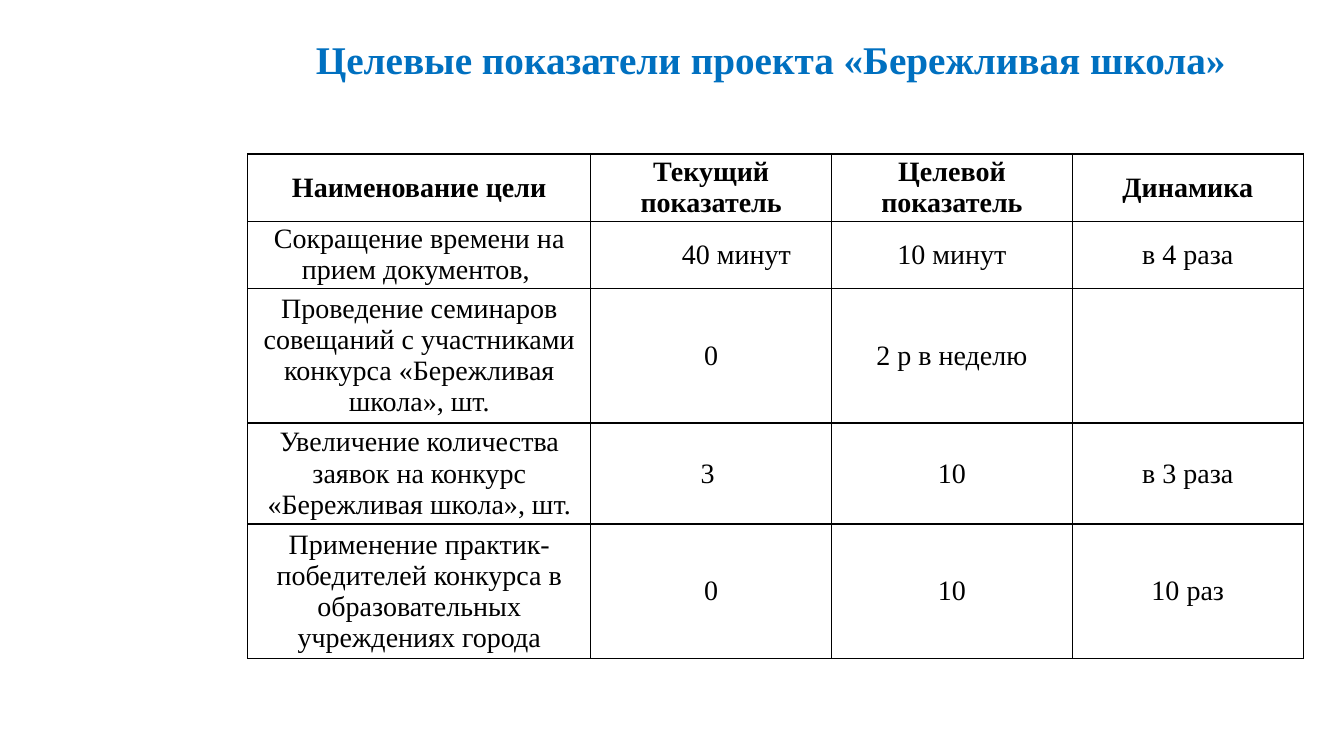
from lxml import etree
from pptx import Presentation
from pptx.dml.color import RGBColor
from pptx.enum.text import MSO_ANCHOR, PP_ALIGN
from pptx.oxml.ns import qn
from pptx.util import Pt

CENTER = PP_ALIGN.CENTER
MIDDLE = MSO_ANCHOR.MIDDLE
BLUE = RGBColor(0x00, 0x70, 0xC0)
BLACK = RGBColor(0x00, 0x00, 0x00)
WHITE = RGBColor(0xFF, 0xFF, 0xFF)
FONT = "Times New Roman"

COLUMN_WIDTHS = [245, 172, 172, 165]
ROW_HEIGHTS = [48, 48, 96, 72, 96]
INDENTS = {"40 минут": 36}
GOALS = [
    ["Наименование цели", "Текущий показатель", "Целевой показатель", "Динамика"],
    ["Сокращение времени на прием документов, ", "40 минут", "10 минут", "в 4 раза"],
    ["Проведение семинаров совещаний с участниками конкурса «Бережливая школа», шт.",
     "0", "2 р в неделю", ""],
    ["Увеличение количества заявок на конкурс «Бережливая школа», шт.",
     "3 ", "10", "в 3 раза"],
    ["Применение практик-победителей конкурса в образовательных учреждениях города",
     "0", "10", "10 раз"],
]


def write_text(frame, text, size=20, color=BLACK, bold=False, indent=0):
    """Put one centred paragraph into a text frame."""
    frame.word_wrap = True
    paragraph = frame.paragraphs[0]
    paragraph.alignment = CENTER
    if indent:
        paragraph._p.get_or_add_pPr().set("marL", str(Pt(indent)))
    font = paragraph.font
    if text:
        run = paragraph.add_run()
        run.text = text
        font = run.font
    font.name = FONT
    font.size = Pt(size)
    font.bold = bold
    font.color.rgb = color


def add_title(slide, text):
    """Add the blue heading above the table."""
    heading = slide.shapes.add_textbox(Pt(141), Pt(22), Pt(819), Pt(41))
    write_text(heading.text_frame, text, size=28, color=BLUE, bold=True)


def set_borders(cell):
    """Draw thin black lines on all sides of a cell."""
    properties = cell._tc.get_or_add_tcPr()
    for position, side in enumerate(("a:lnL", "a:lnR", "a:lnT", "a:lnB")):
        line = etree.Element(qn(side), w=str(Pt(1)))
        fill = etree.SubElement(line, qn("a:solidFill"))
        etree.SubElement(fill, qn("a:srgbClr"), val=str(BLACK))
        properties.insert(position, line)


def fill_cell(cell, text, bold):
    """Format one table cell and write its text."""
    cell.fill.solid()
    cell.fill.fore_color.rgb = WHITE
    cell.vertical_anchor = MIDDLE
    cell.margin_left = cell.margin_right = Pt(4.5)
    cell.margin_top = cell.margin_bottom = 0
    set_borders(cell)
    write_text(cell.text_frame, text, bold=bold, indent=INDENTS.get(text, 0))


def add_goals_table(slide):
    """Add the table of current and target values."""
    goals = slide.shapes.add_table(
        len(ROW_HEIGHTS), len(COLUMN_WIDTHS), Pt(177), Pt(110),
        Pt(sum(COLUMN_WIDTHS)), Pt(sum(ROW_HEIGHTS))).table
    goals.horz_banding = False
    for column, width in zip(goals.columns, COLUMN_WIDTHS):
        column.width = Pt(width)
    for row, height in zip(goals.rows, ROW_HEIGHTS):
        row.height = Pt(height)
    for row_index, values in enumerate(GOALS):
        for column_index, value in enumerate(values):
            fill_cell(goals.cell(row_index, column_index), value, bold=row_index == 0)


def main():
    """Build the slide and save it."""
    presentation = Presentation()
    presentation.slide_width = Pt(960)
    presentation.slide_height = Pt(540)
    slide = presentation.slides.add_slide(presentation.slide_layouts[6])
    add_title(slide, "Целевые показатели проекта «Бережливая школа»")
    add_goals_table(slide)
    presentation.save("out.pptx")


if __name__ == "__main__":
    main()
